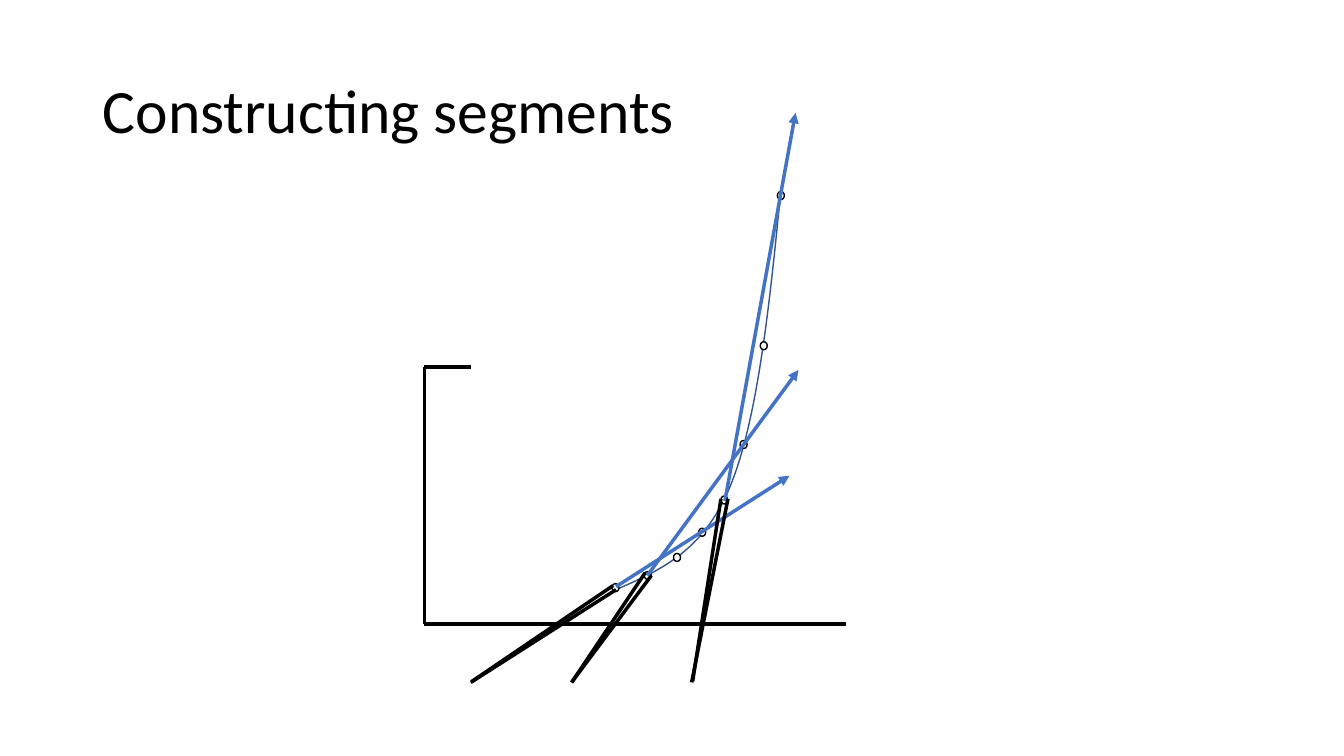
from pptx import Presentation
from pptx.dml.color import RGBColor
from pptx.enum.shapes import MSO_CONNECTOR, MSO_SHAPE
from pptx.enum.text import MSO_ANCHOR, MSO_AUTO_SIZE, PP_ALIGN
from pptx.oxml.ns import qn
from pptx.util import Inches, Pt
from lxml.etree import SubElement

COLORS = {"ink": "000000", "paper": "FFFFFF", "arrow": "4472C4", "curve": "325491"}

TITLE_BOX = (0.92, 0.4, 11.5, 1.45)
PLOT_BOX = (4.21, 1.12, 4.18, 5.65)

# Plot geometry, in inches from the top left corner of the plot box
CURVE = [(1.9, 4.73), (2.33, 4.54), (2.76, 4.36), (3.03, 3.71),
         (3.3, 3.06), (3.42, 1.94), (3.53, 0.82)]
DOT_SIZE = (0.07, 0.08)
DOTS = [(1.86, 4.67), (2.18, 4.55), (2.47, 4.37), (2.72, 4.12),
        (2.94, 3.8), (3.13, 3.25), (3.33, 2.27), (3.5, 0.78)]
SHORT_ARROWS = [((1.9, 4.7), (3.62, 3.6)), ((2.98, 3.85), (3.68, 0))]
LONG_ARROW = ((2.21, 4.59), (3.71, 2.55))
STEEP_TAILS = [((2.19, 4.56), (1.46, 5.65)), ((2.25, 4.59), (1.46, 5.65)),
               ((3.01, 3.83), (2.65, 5.65)), ((2.94, 3.83), (2.66, 5.64))]
FLAT_TAILS = [((0.47, 5.64), (1.87, 4.69)), ((0.46, 5.65), (1.9, 4.73))]
AXIS_TOP, AXIS_BOTTOM, TICK = 2.52, 5.07, 0.46


def color(name):
    return RGBColor.from_string(COLORS[name])


def apply(target, values):
    for name, value in values.items():
        setattr(target, name, value)


def add_title(page, box):
    title = page.shapes.title
    apply(title, dict(zip(("left", "top", "width", "height"), map(Inches, box))))
    apply(title.text_frame, {"word_wrap": True, "auto_size": MSO_AUTO_SIZE.NONE,
                             "vertical_anchor": MSO_ANCHOR.MIDDLE})
    para = title.text_frame.paragraphs[0]
    apply(para, {"alignment": PP_ALIGN.LEFT, "line_spacing": 0.9})
    span = para.add_run()
    span.text = "Constructing segments"
    apply(span.font, {"name": "Calibri", "size": Pt(44)})
    span.font.color.rgb = color("ink")


def add_line(page, start, end, color_name, arrow=False):
    line = page.shapes.add_connector(MSO_CONNECTOR.STRAIGHT, *start, *end)
    line.line.width = Pt(2.5)
    line.line.color.rgb = color(color_name)
    if arrow:
        SubElement(line.line._get_or_add_ln(), qn("a:tailEnd"), type="triangle")
    SubElement(line._element.spPr, qn("a:effectLst"))


def add_curve(page, points):
    builder = page.shapes.build_freeform(*points[0], scale=1.0)
    builder.add_line_segments(points[1:], close=False)
    curve = builder.convert_to_shape()
    # Every three vertices become one Bézier segment
    steps = list(curve._element.iter(qn("a:lnTo")))
    outline = steps[0].getparent()
    for first in range(0, len(steps), 3):
        bezier = SubElement(outline, qn("a:cubicBezTo"))
        for step in steps[first:first + 3]:
            bezier.append(step[0])
            outline.remove(step)
    curve.shadow.inherit = False
    curve.fill.background()
    curve.line.width = Pt(1)
    curve.line.color.rgb = color("curve")


def add_dot(page, corner):
    dot = page.shapes.add_shape(MSO_SHAPE.OVAL, *corner, *map(Inches, DOT_SIZE))
    dot.shadow.inherit = False
    dot.fill.solid()
    dot.fill.fore_color.rgb = color("paper")
    dot.line.width = Pt(1)
    dot.line.color.rgb = color("ink")


def add_plot(page, box):
    left, top, width, _ = box

    def place(point):
        return Inches(left + point[0]), Inches(top + point[1])

    # Curve and sample points
    add_curve(page, [place(point) for point in CURVE])
    for corner in DOTS:
        add_dot(page, place(corner))

    # Segments, their tails and the axes, from back to front
    axes = [((0, AXIS_BOTTOM), (width, AXIS_BOTTOM)),
            ((0, AXIS_TOP), (0, AXIS_BOTTOM)),
            ((0, AXIS_TOP), (TICK, AXIS_TOP))]
    layers = [(SHORT_ARROWS, "arrow", True),
              (STEEP_TAILS + axes + FLAT_TAILS, "ink", False),
              ([LONG_ARROW], "arrow", True)]
    for lines, color_name, arrow in layers:
        for start, end in lines:
            add_line(page, place(start), place(end), color_name, arrow)


def main():
    deck = Presentation()
    apply(deck, {"slide_width": Inches(13.33), "slide_height": Inches(7.5)})
    page = deck.slides.add_slide(deck.slide_layouts[5])
    add_title(page, TITLE_BOX)
    add_plot(page, PLOT_BOX)
    deck.save("out.pptx")


if __name__ == "__main__":
    main()
